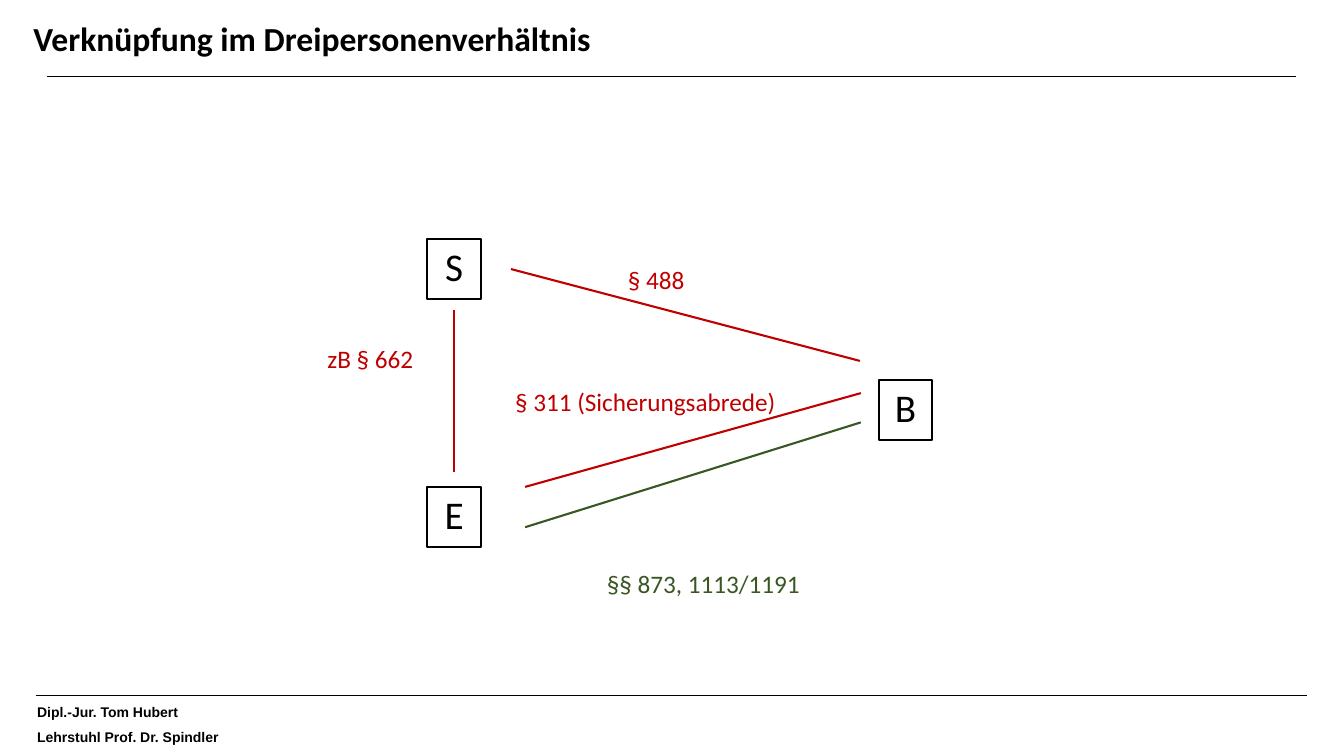
import pptx
import pptx.dml.color
import pptx.enum.shapes
import pptx.enum.text
import pptx.oxml.ns
import pptx.util
from lxml import etree

Pt = pptx.util.Pt
RGBColor = pptx.dml.color.RGBColor
ANCHOR = pptx.enum.text.MSO_ANCHOR
ALIGN = pptx.enum.text.PP_ALIGN

BLACK = RGBColor(0x00, 0x00, 0x00)
RED = RGBColor(0xC0, 0x00, 0x00)
GREEN = RGBColor(0x38, 0x57, 0x23)


def apply(target, values):
    for name, value in values.items():
        setattr(target, name, value)


class SlideBuilder:
    """Holds the text styles and the current slide."""

    title_font = {"name": "Calibri", "size": Pt(24), "bold": True}
    party_font = {"name": "Calibri", "size": Pt(28)}
    label_font = {"name": "Calibri", "size": Pt(18)}
    footer_font = {"name": "Arial", "size": Pt(10), "bold": True}
    party_paragraph = {"alignment": ALIGN.CENTER, "line_spacing": 0.9, "space_before": Pt(10)}
    title_paragraph = {"alignment": ALIGN.LEFT, "line_spacing": 0.9}
    party_size = (38.2, 43.2)

    def __init__(self, presentation):
        self.slide = presentation.slides.add_slide(presentation.slide_layouts[5])

    def fill_text(self, shape, text, font, color, paragraph_format, frame_format):
        apply(shape.text_frame, frame_format)
        paragraph = shape.text_frame.paragraphs[0]
        apply(paragraph, paragraph_format)
        run = paragraph.add_run()
        run.text = text
        apply(run.font, font)
        run.font.color.rgb = color

    def title(self, text, left, top, width, height):
        shape = self.slide.shapes.title
        apply(shape, {"left": Pt(left), "top": Pt(top), "width": Pt(width), "height": Pt(height)})
        self.fill_text(shape, text, self.title_font, BLACK, self.title_paragraph,
                       {"vertical_anchor": ANCHOR.MIDDLE, "word_wrap": True})

    def line(self, start, end, color, width):
        connector = self.slide.shapes.add_connector(
            pptx.enum.shapes.MSO_CONNECTOR.STRAIGHT, *map(Pt, start + end))
        connector.line.color.rgb = color
        connector.line.width = Pt(width)
        etree.SubElement(connector._element.spPr, pptx.oxml.ns.qn("a:effectLst"))

    def party(self, text, left, top):
        shape = self.slide.shapes.add_shape(
            pptx.enum.shapes.MSO_SHAPE.RECTANGLE, *map(Pt, (left, top) + self.party_size))
        shape.shadow.inherit = False
        shape.fill.background()
        shape.line.color.rgb = BLACK
        shape.line.width = Pt(1.5)
        self.fill_text(shape, text, self.party_font, BLACK, self.party_paragraph,
                       {"vertical_anchor": ANCHOR.MIDDLE, "word_wrap": True})

    def text(self, text, left, top, width, height, font, color, wrap):
        shape = self.slide.shapes.add_textbox(*map(Pt, (left, top, width, height)))
        self.fill_text(shape, text, font, color, {},
                       {"word_wrap": wrap, "auto_size": pptx.enum.text.MSO_AUTO_SIZE.SHAPE_TO_FIT_TEXT})

    def label(self, text, left, top, width, color):
        self.text(text, left, top, width, 29, self.label_font, color, True)

    def footer(self, text, top, width):
        self.text(text, 19.5, top, width, 19.4, self.footer_font, BLACK, False)


def main():
    presentation = pptx.Presentation()
    presentation.slide_width = Pt(960)
    presentation.slide_height = Pt(540)
    builder = SlideBuilder(presentation)

    # Title and footer with their rules
    builder.title("Verknüpfung im Dreipersonenverhältnis", 16.6, 9.4, 909.4, 38.9)
    builder.line((33.8, 54.7), (925.9, 54.7), BLACK, 1)
    builder.line((25.5, 496.8), (933.8, 496.8), BLACK, 1)
    builder.footer("Dipl.-Jur. Tom Hubert", 499, 117.4)
    builder.footer("Lehrstuhl Prof. Dr. Spindler", 517, 149)

    # The three parties
    for name, left, top in (("S", 305.3, 170.6), ("E", 305.3, 347.8), ("B", 627.8, 271.4)):
        builder.party(name, left, top)

    # Legal relations between them
    for start, end, color in (
        ((365, 192.2), (614.2, 257.8), RED),
        ((324, 221.8), (324, 337), RED),
        ((375.1, 347.8), (614.9, 280.8), RED),
        ((375.1, 376.6), (614.9, 301.7), GREEN),
    ):
        builder.line(start, end, color, 1.5)

    # Statutes for the relations
    for text, left, top, width, color in (
        ("§ 488", 441.4, 185, 97.2, RED),
        ("zB § 662", 226.8, 242, 97.2, RED),
        ("§ 311 (Sicherungsabrede)", 360.9, 272.4, 203.8, RED),
        ("§§ 873, 1113/1191", 426.4, 402.7, 164.2, GREEN),
    ):
        builder.label(text, left, top, width, color)

    presentation.save("out.pptx")


if __name__ == "__main__":
    main()
